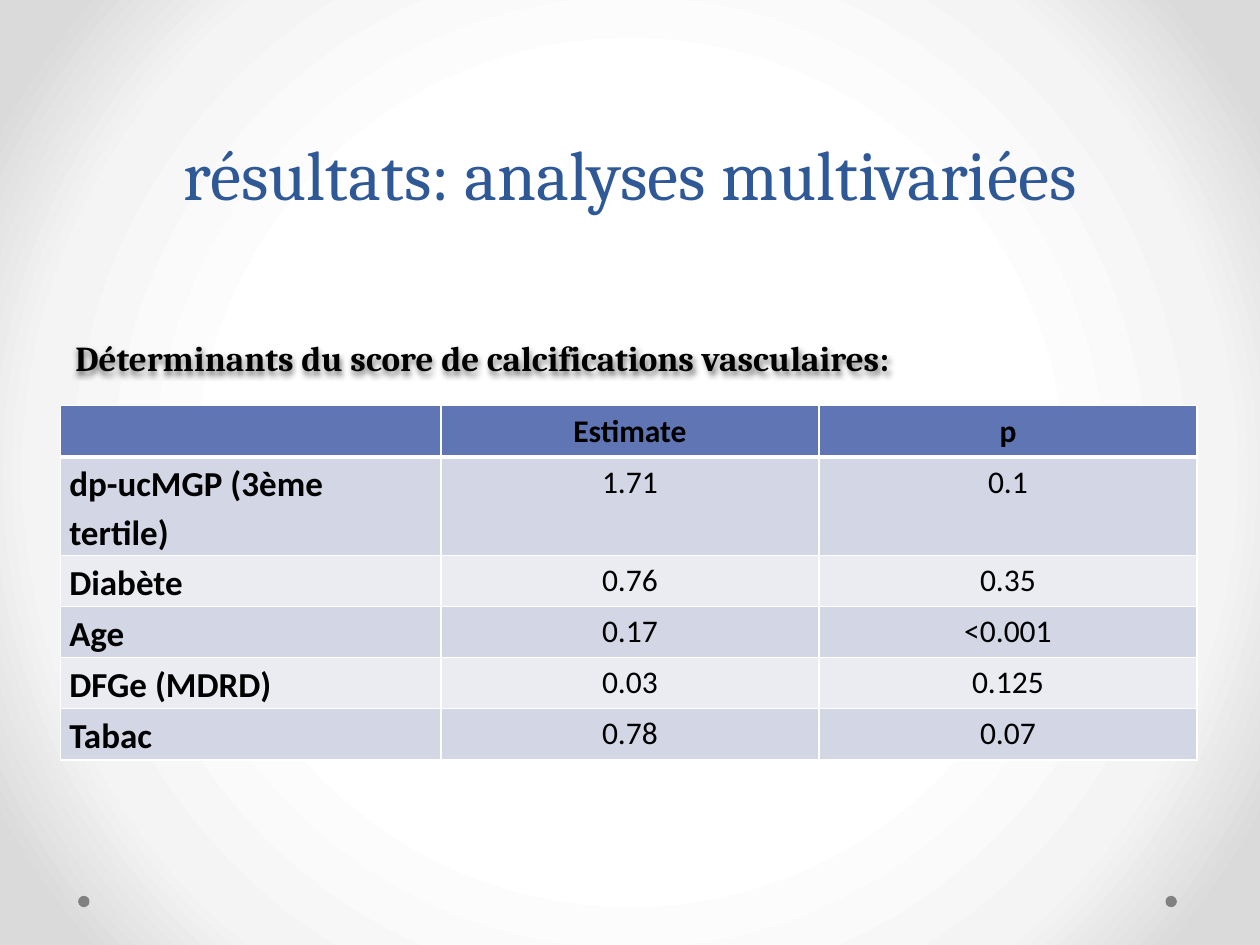
from pptx import Presentation
from pptx.dml.color import RGBColor
from pptx.enum.shapes import MSO_SHAPE as SHAPE
from pptx.enum.text import MSO_ANCHOR as ANCHOR, MSO_AUTO_SIZE as AUTO, PP_ALIGN as ALIGN
from pptx.oxml import parse_xml
from pptx.oxml.ns import nsdecls, qn
from pptx.util import Inches, Pt

TITLE = "résultats: analyses multivariées"
SUBTITLE = "Déterminants du score de calcifications vasculaires:"
ROWS = [
    ("", "Estimate", "p"),
    ("dp-ucMGP (3ème tertile)", "1.71", "0.1"),
    ("Diabète", "0.76", "0.35"),
    ("Age", "0.17", "<0.001"),
    ("DFGe (MDRD)", "0.03", "0.125"),
    ("Tabac", "0.78", "0.07"),
]
COL_WIDTHS = (3.02, 3, 3)
TABLE_HEIGHT = 2.43
HEADER_FILL, BAND_FILLS = "6076B4", ("EAECF2", "D2D6E5")
BG_STOPS = [(50, "FFFFFF"), (76, "F4F4F4"), (92, "DADADA")]
DOT_LEFTS = (9.25, 0.62)

TITLE_FONT = dict(name="Cambria", size=Pt(40), bold=False)
SUBTITLE_FONT = dict(name="Cambria", size=Pt(20), bold=True)
HEADER_FONT = dict(name="Calibri", size=Pt(18), bold=True)
LABEL_FONT = dict(name="Calibri", size=Pt(20), bold=True)
VALUE_FONT = dict(name="Calibri", size=Pt(18), bold=False)
LABEL_MARGINS = dict(left=0.07, right=0.2, top=0, bottom=0)


def paint(target, color):
    target.solid()
    target.fore_color.rgb = RGBColor.from_string(color)


def place(sp, *box):
    for name, value in zip(("left", "top", "width", "height"), box):
        setattr(sp, name, Inches(value))


def write(tf, text, font, color="000000", align=ALIGN.LEFT, spacing=None):
    p = tf.paragraphs[0]
    p.alignment, p.line_spacing = align, spacing
    r = p.add_run()
    r.text = text
    for name, value in font.items():
        setattr(r.font, name, value)
    paint(r.font.fill, color)


def set_background(s):
    s.background.fill.gradient()
    grad = s.element.find(".//" + qn("a:gradFill"))
    stops = "".join(f'<a:gs pos="{pos * 1000}"><a:srgbClr val="{color}"/></a:gs>' for pos, color in BG_STOPS)
    new = parse_xml(
        f'<a:gradFill {nsdecls("a")} rotWithShape="1"><a:gsLst>{stops}</a:gsLst><a:path path="circle">'
        '<a:fillToRect l="50000" t="50000" r="50000" b="50000"/></a:path></a:gradFill>')
    grad.getparent().replace(grad, new)


def set_borders(cell, widths):
    tc_pr = cell._tc.get_or_add_tcPr()
    for i, (side, width) in enumerate(widths.items()):
        tc_pr.insert(i, parse_xml(
            f'<a:ln{side} {nsdecls("a")} w="{Pt(width)}"><a:solidFill>'
            f'<a:srgbClr val="FFFFFF"/></a:solidFill></a:ln{side}>'))


def add_shadow(sp):
    sp.element.spPr.append(parse_xml(
        f'<a:effectLst {nsdecls("a")}><a:outerShdw blurRad="40000" dist="23000" dir="5400000" rotWithShape="0">'
        '<a:srgbClr val="000000"><a:alpha val="50000"/></a:srgbClr></a:outerShdw></a:effectLst>'))


def add_results_table(s):
    table = s.shapes.add_table(
        len(ROWS), len(COL_WIDTHS), Inches(0.48), Inches(3.22),
        Inches(sum(COL_WIDTHS)), Inches(TABLE_HEIGHT)).table
    for col, width in zip(table.columns, COL_WIDTHS):
        col.width = Inches(width)
    for i, row in enumerate(ROWS):
        for j, text in enumerate(row):
            cell = table.cell(i, j)
            paint(cell.fill, BAND_FILLS[i % 2] if i else HEADER_FILL)
            set_borders(cell, dict(L=1, R=1, T=3 if i == 1 else 1, B=1 if i else 3))
            if i and j == 0:
                for side, margin in LABEL_MARGINS.items():
                    setattr(cell, f"margin_{side}", Inches(margin))
                write(cell.text_frame, text, LABEL_FONT, spacing=1.15)
            elif text:
                write(cell.text_frame, text, VALUE_FONT if i else HEADER_FONT, align=ALIGN.CENTER)


def main():
    prs = Presentation()
    prs.slide_width, prs.slide_height = Inches(10), Inches(7.5)
    s = prs.slides.add_slide(prs.slide_layouts[5])
    set_background(s)

    for left in DOT_LEFTS:
        dot = s.shapes.add_shape(SHAPE.OVAL, Inches(left), Inches(7.11), Inches(0.09), Inches(0.09))
        dot.shadow.inherit = False
        paint(dot.fill, "808080")
        dot.line.fill.background()

    title = s.shapes.title
    place(title, 0.5, 0, 9, 1.75)
    tf = title.text_frame
    tf.auto_size, tf.vertical_anchor, tf.word_wrap = AUTO.NONE, ANCHOR.BOTTOM, True
    write(tf, TITLE, TITLE_FONT, "2F5897", ALIGN.CENTER, Pt(58))

    add_results_table(s)

    sp = s.shapes.add_textbox(Inches(0.5), Inches(2.62), Inches(9), Inches(0.43))
    add_shadow(sp)
    tf = sp.text_frame
    tf.word_wrap, tf.vertical_anchor = True, ANCHOR.MIDDLE
    write(tf, SUBTITLE, SUBTITLE_FONT)

    prs.save("out.pptx")


if __name__ == "__main__":
    main()
